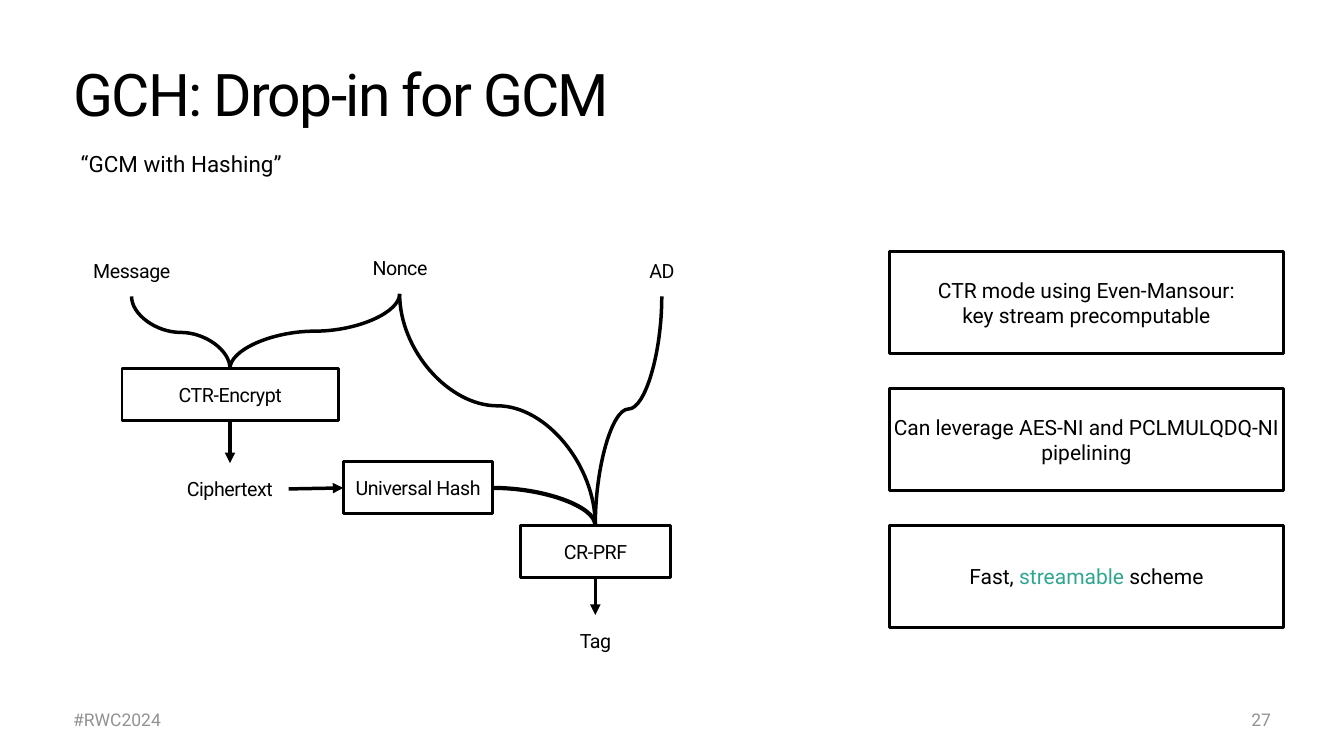
from lxml.etree import SubElement
from pptx import Presentation
from pptx.dml.color import RGBColor
from pptx.enum.shapes import MSO_CONNECTOR, MSO_SHAPE
from pptx.enum.text import MSO_ANCHOR, MSO_AUTO_SIZE, PP_ALIGN
from pptx.oxml.ns import qn
from pptx.util import Cm, Pt

COLORS = {"ink": "000000", "paper": "FFFFFF", "muted": "929292", "accent": "32A691"}
FRAME = {
    "margin_left": Cm(0.16), "margin_right": Cm(0.16),
    "margin_top": Cm(0.16), "margin_bottom": Cm(0.16),
    "auto_size": MSO_AUTO_SIZE.NONE, "word_wrap": True,
    "vertical_anchor": MSO_ANCHOR.MIDDLE,
}


def rgb(name):
    return RGBColor.from_string(COLORS[name])


def set_all(target, values):
    for name, value in values.items():
        setattr(target, name, value)


class Deck:
    font = "Roboto"

    def __init__(self, width, height):
        self.prs = Presentation()
        self.prs.slide_width, self.prs.slide_height = Cm(width), Cm(height)

    def new_slide(self):
        self.slide = self.prs.slides.add_slide(self.prs.slide_layouts[5])
        self.shapes = self.slide.shapes

    def fill_text(self, shape, lines, size, color="ink", spacing=0, frame=None,
                  **paragraph_format):
        """Each line is a string or a list of (text, color) runs."""
        text_frame = shape.text_frame
        set_all(text_frame, FRAME | (frame or {}))
        for i, line in enumerate(lines):
            paragraph = text_frame.add_paragraph() if i else text_frame.paragraphs[0]
            set_all(paragraph, {"alignment": PP_ALIGN.CENTER} | paragraph_format)
            for text, run_color in [(line, color)] if isinstance(line, str) else line:
                run = paragraph.add_run()
                run.text = text
                set_all(run.font, {"name": self.font, "size": Pt(size)})
                run.font.color.rgb = rgb(run_color)
                if spacing:
                    run.font._element.set("spc", str(int(spacing * 100)))

    def title(self, text, at):
        heading = self.shapes.title
        set_all(heading, dict(zip(("left", "top", "width", "height"), map(Cm, at))))
        self.fill_text(heading, [text], 84, spacing=-2.5, alignment=PP_ALIGN.LEFT,
                       line_spacing=0.8, frame={"vertical_anchor": MSO_ANCHOR.BOTTOM})

    def text(self, line, at, size=28, **options):
        self.fill_text(self.shapes.add_textbox(*map(Cm, at)), [line], size, **options)

    def box(self, lines, at, size=28, outlined=True, **options):
        box = self.shapes.add_shape(MSO_SHAPE.RECTANGLE, *map(Cm, at))
        box.shadow.inherit = False
        box.fill.solid()
        box.fill.fore_color.rgb = rgb("paper")
        if outlined:
            box.line.color.rgb, box.line.width = rgb("ink"), Pt(4)
        else:
            box.line.fill.background()
        self.fill_text(box, lines, size, **options)

    def connect(self, kind, start, end, width=5):
        link = self.shapes.add_connector(kind, *map(Cm, start + end))
        link.line.color.rgb, link.line.width = rgb("ink"), Pt(width)
        SubElement(link._element.spPr, qn("a:effectLst"))
        return link

    def arrow(self, start, end):
        link = self.connect(MSO_CONNECTOR.STRAIGHT, start, end)
        outline = link._element.spPr.find(qn("a:ln"))
        SubElement(outline, qn("a:tailEnd"), type="triangle")

    def drop_curve(self, start, end, bend=0.5):
        """S-curve that leaves and arrives vertically: a connector turned a quarter."""
        (x1, y1), (x2, y2) = start, end
        mid_x, mid_y = (x1 + x2) / 2, (y1 + y2) / 2
        half_w, half_h = (y2 - y1) / 2, abs(x2 - x1) / 2
        if x2 > x1:
            half_w = -half_w
        link = self.connect(MSO_CONNECTOR.CURVE, (mid_x - half_w, mid_y - half_h),
                            (mid_x + half_w, mid_y + half_h))
        properties = link._element.spPr
        quarter_turns = 3 if x2 > x1 else 1
        properties.find(qn("a:xfrm")).set("rot", str(quarter_turns * 90 * 60000))
        guides = properties.find(qn("a:prstGeom")).find(qn("a:avLst"))
        SubElement(guides, qn("a:gd"), name="adj1", fmla=f"val {round(bend * 100000)}")

    def quarter_curve(self, start, end):
        link = self.connect(MSO_CONNECTOR.CURVE, start, end, width=6)
        link._element.spPr.find(qn("a:prstGeom")).set("prst", "curvedConnector2")


def main():
    deck = Deck(67.73, 38.1)
    deck.new_slide()

    # Heading and footer
    deck.title("GCH: Drop-in for GCM", (3.53, 2.26, 60.68, 4.32))
    deck.text("“GCM with Hashing”", (3.91, 7.42, 11.2, 1.65), 32, frame={"word_wrap": False},
              alignment=PP_ALIGN.LEFT, space_before=Pt(8))
    deck.text("#RWC2024", (3.53, 35.28, 25.4, 1.93), 25, color="muted", alignment=PP_ALIGN.LEFT)
    deck.text("27", (38.81, 35.51, 25.4, 1.47), 25, color="muted", alignment=PP_ALIGN.RIGHT)

    # Inputs, stages and outputs of the scheme
    wide, narrow, row = 10.9, 7.54, 2.62
    for name, left, top, width, outlined in (
        ("Message", 1.19, 12.32, wide, False),
        ("CR-PRF", 26.24, 26.47, narrow, True),
        ("Tag", 24.56, 30.99, wide, False),
        ("CTR-Encrypt", 6.15, 18.57, wide, True),
        ("Universal Hash", 17.3, 23.27, narrow, True),
    ):
        deck.box([name], (left, top, width, row), outlined=outlined, spacing=-0.6)
    for name, left, top, width in (
        ("Ciphertext", 8.61, 23.34, 5.94),
        ("AD", 27.91, 12.32, wide),
        ("Nonce", 14.71, 12.19, wide),
    ):
        deck.text(name, (left, top, width, row), spacing=-0.6)

    # Data flow
    message, nonce, ad = (6.63, 14.94), (20.14, 14.81), (33.35, 14.94)
    encrypt, prf = (11.59, 18.57), (30, 26.47)
    deck.drop_curve(message, encrypt)
    deck.drop_curve(nonce, encrypt)
    deck.drop_curve(nonce, prf, bend=0.484)
    deck.drop_curve(ad, prf, bend=0.492)
    deck.quarter_curve((24.84, 24.59), prf)
    deck.arrow((11.59, 21.19), (11.59, 23.34))
    deck.arrow((14.55, 24.64), (17.3, 24.59))
    deck.arrow((30, 29.09), (30, 30.99))

    # Properties
    properties = (
        ["CTR mode using Even-Mansour:", "key stream precomputable"],
        ["Can leverage AES-NI and PCLMULQDQ-NI pipelining"],
        [[("Fast, ", "ink"), ("streamable", "accent"), (" scheme", "ink")]],
    )
    for i, lines in enumerate(properties):
        deck.box(lines, (44.83, 12.67 + 6.91 * i, 19.84, 5.13), size=30)

    deck.prs.save("out.pptx")


if __name__ == "__main__":
    main()
